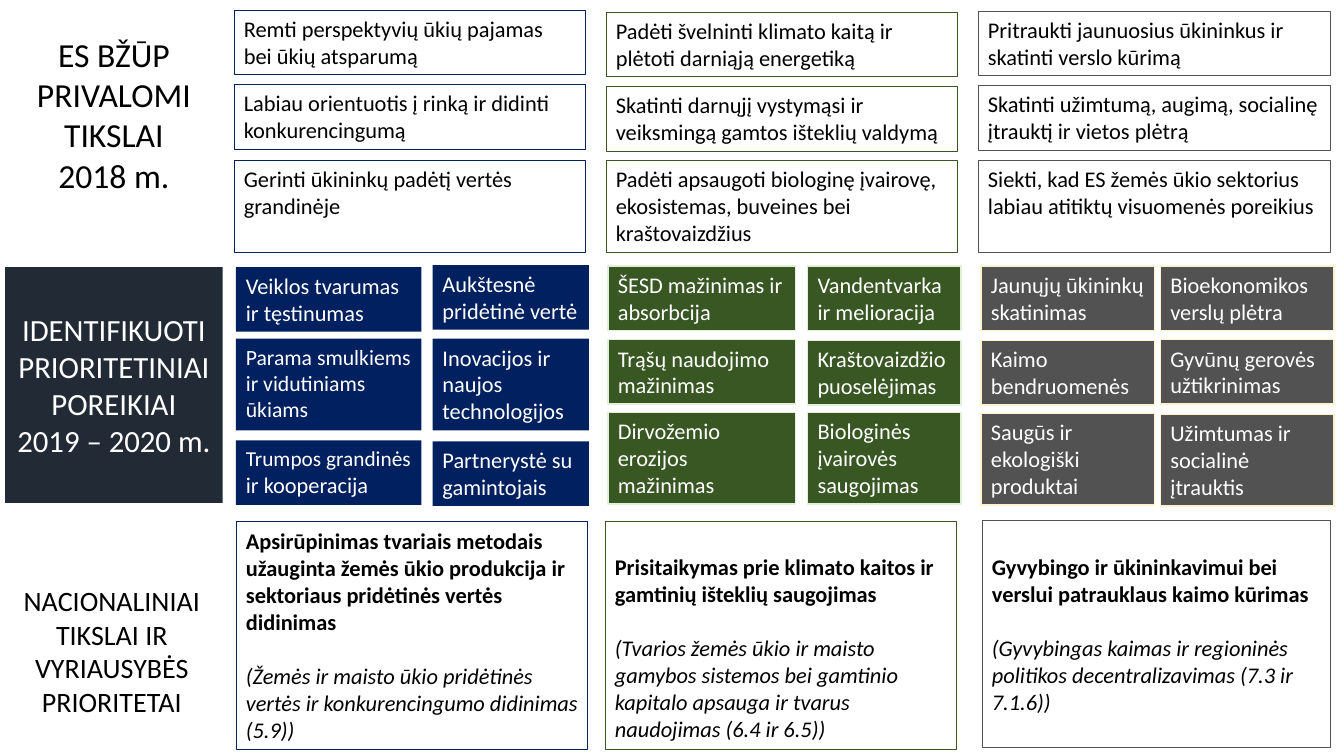
from pptx import Presentation
from pptx.dml.color import RGBColor
from pptx.enum.shapes import MSO_SHAPE
from pptx.enum.text import MSO_ANCHOR, MSO_AUTO_SIZE, PP_ALIGN
from pptx.util import Inches, Pt

FONT = "Calibri"
COLORS = {
    "black": "000000", "white": "FFFFFF", "slate": "222A35",
    "blue": "002060", "green": "385723", "grey": "525252",
    "pale green": "E2F0D9", "cream": "FFF2CC",
}
LINE_HEIGHT, INSET = 0.27, 0.05
BLANK_LINE = 19.5  # points

# Row labels: (paragraphs, size)
EU_LABEL = (["ES BŽŪP PRIVALOMI TIKSLAI", "2018 m."], 24)
NEEDS_LABEL = (["IDENTIFIKUOTI PRIORITETINIAI POREIKIAI", "2019 – 2020 m."], 22)
NATIONAL_LABEL = (["NACIONALINIAI TIKSLAI IR VYRIAUSYBĖS PRIORITETAI"], 20)

# Each need is a list of (text, size) runs
THEMES = [
    {
        "color": "blue", "edge": None,
        "goal left": 2.32, "goal tops": (0.1, 0.84, 1.59),
        "goals": [
            "Remti perspektyvių ūkių pajamas bei ūkių atsparumą",
            "Labiau orientuotis į rinką ir didinti konkurencingumą",
            "Gerinti ūkininkų padėtį vertės grandinėje",
        ],
        "need lines": (2, 3, 2),
        "stacks": [
            (2.34, 1.84, (2.65, 3.36, 4.37), [
                [("Veiklos tvarumas ir tęstinumas", 16)],
                [("Parama smulkiems ir vidutiniams ūkiams", 15.5)],
                [("Trumpos grandinės ", 15.2), ("ir kooperacija", 16)],
            ]),
            (4.29, 1.55, (2.63, 3.36, 4.38), [
                [("Aukštesnė pridėtinė vertė", 16)],
                [("Inovacijos ir naujos technologijos", 16)],
                [("Partnerystė su gamintojais", 16)],
            ]),
        ],
        "national": (2.34, 5.17, 3.49), "anchor": MSO_ANCHOR.MIDDLE, "lead": 0,
        "aim": "Apsirūpinimas tvariais metodais užauginta žemės ūkio produkcija "
               "ir sektoriaus pridėtinės vertės didinimas",
        "priority": "(Žemės ir maisto ūkio pridėtinės vertės ir "
                    "konkurencingumo didinimas (5.9))",
    },
    {
        "color": "green", "edge": "pale green",
        "goal left": 6.01, "goal tops": (0.12, 0.86, 1.59),
        "goals": [
            "Padėti švelninti klimato kaitą ir plėtoti darniąją energetiką",
            "Skatinti darnųjį vystymąsi ir veiksmingą gamtos išteklių valdymą",
            "Padėti apsaugoti biologinę įvairovę, ekosistemas, buveines bei "
            "kraštovaizdžius",
        ],
        "need lines": (2, 2, 3),
        "stacks": [
            (6.03, 1.86, (2.64, 3.37, 4.09), [
                [("ŠESD mažinimas ir absorbcija", 16)],
                [("Trąšų naudojimo mažinimas", 16)],
                [("Dirvožemio erozijos mažinimas", 16)],
            ]),
            (8.01, 1.52, (2.64, 3.38, 4.09), [
                [("Vandentvarka ir melioracija", 16)],
                [("Kraštovaizdžio puoselėjimas", 16)],
                [("Biologinės įvairovės saugojimas", 16)],
            ]),
        ],
        "national": (6, 5.17, 3.49), "anchor": MSO_ANCHOR.TOP, "lead": LINE_HEIGHT,
        "aim": "Prisitaikymas prie klimato kaitos ir gamtinių išteklių saugojimas",
        "priority": "(Tvarios žemės ūkio ir maisto gamybos sistemos bei gamtinio "
                    "kapitalo apsauga ir tvarus naudojimas (6.4 ir 6.5))",
    },
    {
        "color": "grey", "edge": "cream",
        "goal left": 9.7, "goal tops": (0.11, 0.85, 1.59),
        "goals": [
            "Pritraukti jaunuosius ūkininkus ir skatinti verslo kūrimą",
            "Skatinti užimtumą, augimą, socialinę įtrauktį ir vietos plėtrą",
            "Siekti, kad ES žemės ūkio sektorius labiau atitiktų visuomenės poreikius",
        ],
        "need lines": (2, 2, 3),
        "stacks": [
            (9.73, 1.72, (2.64, 3.38, 4.1), [
                [("Jaunųjų ūkininkų skatinimas", 16)],
                [("Kaimo bendruomenės", 16)],
                [("Saugūs ir ekologiški produktai", 16)],
            ]),
            (11.51, 1.72, (2.64, 3.37, 4.11), [
                [("Bioekonomikos verslų plėtra", 16)],
                [("Gyvūnų gerovės užtikrinimas", 16)],
                [("Užimtumas ir socialinė įtrauktis", 16)],
            ]),
        ],
        "national": (9.74, 5.16, 3.46), "anchor": MSO_ANCHOR.MIDDLE, "lead": 0,
        "aim": "Gyvybingo ir ūkininkavimui bei verslui patrauklaus kaimo kūrimas",
        "priority": "(Gyvybingas kaimas ir regioninės politikos decentralizavimas "
                    "(7.3 ir 7.1.6))",
    },
]
GOAL_WIDTH, GOAL_LINES, NATIONAL_HEIGHT = 3.49, (2, 2, 3), 2.26


def rgb(name):
    return RGBColor.from_string(COLORS[name])


def box_height(lines):
    return lines * LINE_HEIGHT + 2 * INSET


def set_up_frame(shape, anchor, lead=0, tail=0):
    """Wrap the text and reserve extra room above (lead) or below (tail)."""
    frame = shape.text_frame
    frame.word_wrap = True
    frame.auto_size = MSO_AUTO_SIZE.NONE
    frame.vertical_anchor = anchor
    frame.margin_left = frame.margin_right = Inches(2 * INSET)
    frame.margin_top = Inches(INSET + lead)
    frame.margin_bottom = Inches(INSET + tail)
    return frame


def add_span(para, text, size, color, bold=False, italic=False):
    span = para.add_run()
    span.text = text
    font = span.font
    font.name, font.size, font.bold, font.italic = FONT, Pt(size), bold, italic
    font.color.rgb = rgb(color)


def write(frame, paragraphs, color, align=PP_ALIGN.LEFT):
    """Fill the frame; each paragraph is a list of add_span arguments."""
    for index, spans in enumerate(paragraphs):
        para = frame.add_paragraph() if index else frame.paragraphs[0]
        para.alignment = align
        for text, size, *style in spans:
            add_span(para, text, size, color, *style)


def write_label(shape, label, color, **room):
    texts, size = label
    frame = set_up_frame(shape, MSO_ANCHOR.MIDDLE, **room)
    write(frame, [[(text, size)] for text in texts], color, PP_ALIGN.CENTER)


def add_box(page, place, fill=None, edge=None, weight=0.5):
    box = page.shapes.add_shape(MSO_SHAPE.RECTANGLE, *map(Inches, place))
    box.shadow.inherit = False
    if fill:
        box.fill.solid()
        box.fill.fore_color.rgb = rgb(fill)
    else:
        box.fill.background()
    if edge:
        box.line.color.rgb = rgb(edge)
        box.line.width = Pt(weight)
    else:
        box.line.fill.background()
    return box


def add_theme(page, theme):
    color = theme["color"]
    for text, top, lines in zip(theme["goals"], theme["goal tops"], GOAL_LINES):
        place = (theme["goal left"], top, GOAL_WIDTH, box_height(lines))
        box = add_box(page, place, "white", color)
        write(set_up_frame(box, MSO_ANCHOR.TOP), [[(text, 16)]], "black")

    for left, width, tops, needs in theme["stacks"]:
        for spans, top, lines in zip(needs, tops, theme["need lines"]):
            place = (left, top, width, box_height(lines))
            box = add_box(page, place, color, theme["edge"], 1)
            write(set_up_frame(box, MSO_ANCHOR.TOP), [spans], "white")

    box = add_box(page, (*theme["national"], NATIONAL_HEIGHT), edge=color)
    frame = set_up_frame(box, theme["anchor"], theme["lead"])
    write(frame, [[(theme["aim"], 16, True)],
                  [(theme["priority"], 16, False, True)]], "black")
    frame.paragraphs[1].space_before = Pt(BLANK_LINE)


def main():
    deck = Presentation()
    deck.slide_width, deck.slide_height = Inches(13.33), Inches(7.5)
    page = deck.slides.add_slide(deck.slide_layouts[5])

    title = page.shapes.title
    title.left, title.top, title.width, title.height = map(
        Inches, (0.05, 0.11, 2.16, 2.39))
    write_label(title, EU_LABEL, "black", tail=0.34)
    needs = add_box(page, (0.05, 2.65, 2.16, 2.34), "slate")
    write_label(needs, NEEDS_LABEL, "white")
    national = page.shapes.add_textbox(*map(Inches, (0.01, 5.19, 2.2, 2.26)))
    write_label(national, NATIONAL_LABEL, "black", lead=LINE_HEIGHT)

    for theme in THEMES:
        add_theme(page, theme)
    deck.save("out.pptx")


if __name__ == "__main__":
    main()
